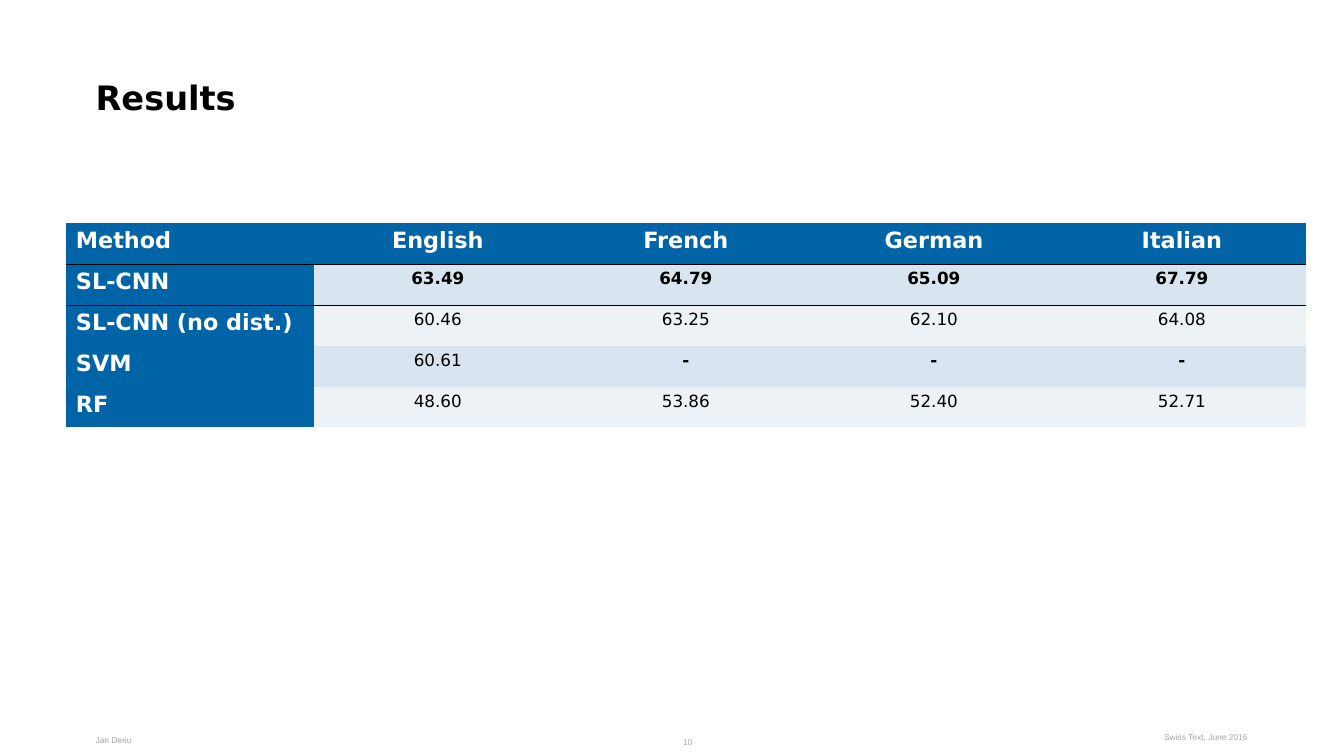
from pptx import Presentation, util as u
from pptx.dml import color
from pptx.enum import text
from pptx.oxml import parse_xml
from pptx.oxml.ns import nsdecls, qn

BLUE, WHITE, BLACK, GREY = "0064A6", "FFFFFF", "000000", "A6A6A6"
BANDS = ["D8E4EF", "EDF2F7"]
PLAIN = "{2D5ABB26-0587-4C30-8999-92F81FD0307C}"
LEFT, MID, RIGHT = text.PP_ALIGN.LEFT, text.PP_ALIGN.CENTER, text.PP_ALIGN.RIGHT

HEADS = ["Method", "English", "French", "German", "Italian"]
SCORES = [
    ["SL-CNN", "63.49", "64.79", "65.09", "67.79"],
    ["SL-CNN (no dist.)", "60.46", "63.25", "62.10", "64.08"],
    ["SVM", "60.61", "-", "-", "-"],
    ["RF", "48.60", "53.86", "52.40", "52.71"],
]


def rgb(code):
    return color.RGBColor.from_string(code)


def write(frame, words, size, tint, bold=False, align=LEFT, face="DejaVu Sans"):
    frame.text = words
    para = frame.paragraphs[0]
    para.alignment = align
    font = para.runs[0].font
    font.name, font.size, font.bold = face, u.Pt(size), bold
    font.color.rgb = rgb(tint)


def pad(frame, gap):
    """Set all four margins, and start the text at the top."""
    frame.margin_left = frame.margin_right = gap
    frame.margin_top = frame.margin_bottom = gap
    frame.vertical_anchor = text.MSO_ANCHOR.TOP
    frame.auto_size = text.MSO_AUTO_SIZE.NONE
    frame.word_wrap = True


def add_title(slide, x, y, w, h):
    title = slide.shapes.title
    title.left, title.top, title.width, title.height = x, y, w, h
    pad(title.text_frame, 0)
    write(title.text_frame, "Results", 24, BLACK, True)


def add_rule(cell, side):
    """Draw a thin black line on one side of a cell."""
    line = parse_xml(
        f'<a:{side} {nsdecls("a")} w="3175"><a:solidFill>'
        f'<a:srgbClr val="{BLACK}"/></a:solidFill></a:{side}>')
    cell._tc.get_or_add_tcPr().insert(0, line)


def add_scores(slide, x, y, w, h):
    rows = [HEADS] + SCORES
    frame = slide.shapes.add_table(len(rows), len(HEADS), x, y, w, h)
    for style in frame.element.iter(qn("a:tableStyleId")):
        style.text = PLAIN
    table = frame.table
    for r, row in enumerate(rows):
        for c, words in enumerate(row):
            cell = table.cell(r, c)
            head = r == 0 or c == 0
            cell.fill.solid()
            cell.fill.fore_color.rgb = rgb(BLUE if head else BANDS[(r - 1) % 2])
            bold = head or r == 1 or words == "-"
            write(cell.text_frame, words, 16 if head else 12,
                  WHITE if head else BLACK, bold, MID if c else LEFT)
            if r < 2:
                add_rule(cell, "lnT" if r else "lnB")


def add_note(slide, words, x, y, w, h, align, gap=0):
    frame = slide.shapes.add_textbox(x, y, w, h).text_frame
    pad(frame, gap)
    write(frame, words, 6, GREY, align=align, face="Arial")


def add_footer(slide, x, y, w, h):
    side = u.Cm(3.25)
    add_note(slide, "Jan Deriu", x, y + u.Cm(0.08), side, h, LEFT)
    add_note(slide, "10", x + u.Cm(11.56), y, u.Cm(3.73), u.Cm(0.48),
             RIGHT, u.Cm(0.25))
    frame = slide.shapes[-1].text_frame
    frame.margin_top = frame.margin_bottom = u.Cm(0.13)
    add_note(slide, "Swiss Text, June 2016", x + w - side, y, side, h, RIGHT)


def main():
    deck = Presentation()
    deck.slide_width, deck.slide_height = u.Cm(33.87), u.Cm(19.05)
    slide = deck.slides.add_slide(deck.slide_layouts[5])
    add_footer(slide, u.Cm(2.41), u.Cm(18.44), u.Cm(29.03), u.Cm(0.61))
    add_title(slide, u.Cm(2.41), u.Cm(1.93), u.Cm(23.62), u.Cm(2.16))
    add_scores(slide, u.Cm(1.66), u.Cm(5.62), u.Cm(31.25), u.Cm(5.15))
    deck.save("out.pptx")


if __name__ == "__main__":
    main()
